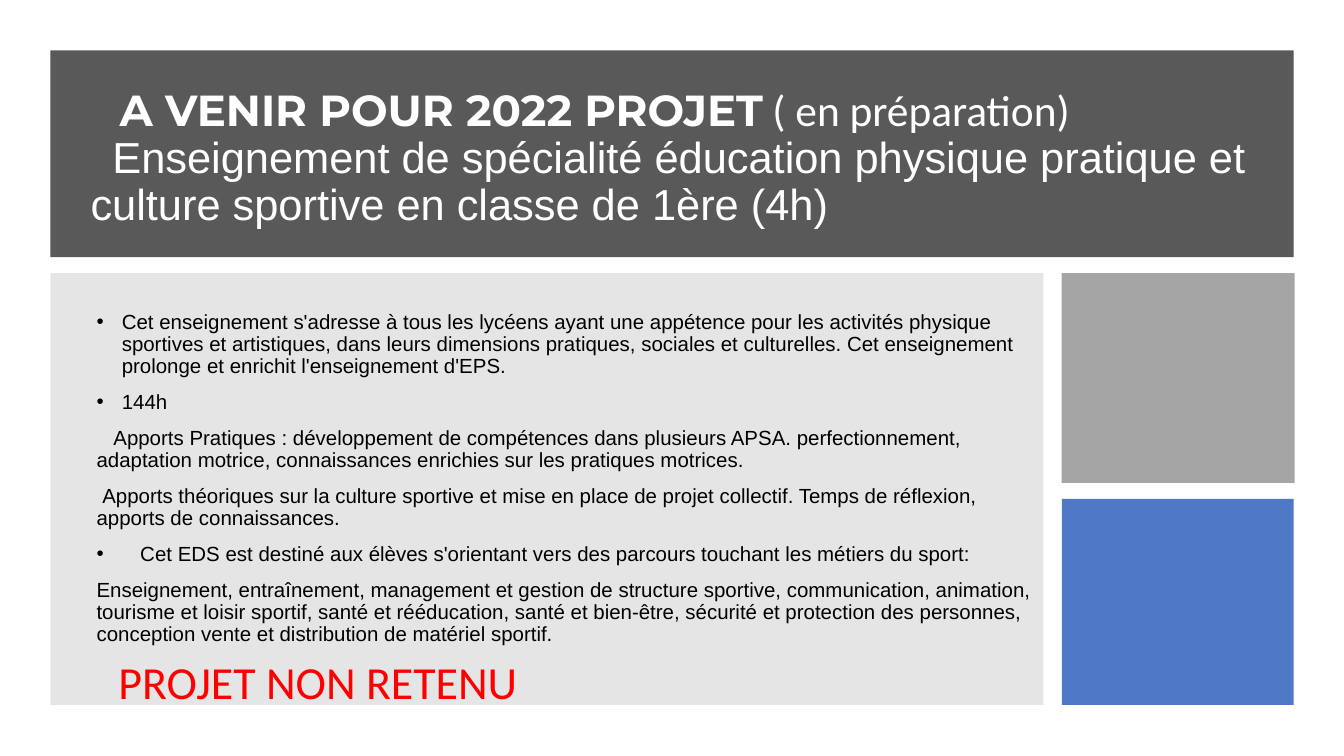
"""Build a slide announcing a sports teaching project."""
from dataclasses import dataclass
from typing import Any

import lxml.etree
import pptx
import pptx.dml.color
import pptx.enum.shapes
import pptx.enum.text
import pptx.oxml.ns
import pptx.util


@dataclass(frozen=True)
class Theme:
    banner: str = "595959"
    panel: str = "808080"
    grey: str = "A5A5A5"
    blue: str = "4472C4"
    light: str = "FFFFFF"
    dark: str = "000000"
    alert: str = "FF0000"
    title_size: float = 31
    body_size: float = 14.6
    alert_size: float = 32.8
    main_font: str = "Arial"
    soft_font: str = "Calibri"
    heavy_font: str = "Montserrat"


@dataclass(frozen=True)
class Area:
    column: float
    row: float
    columns: float
    rows: float


@dataclass(frozen=True)
class Panel:
    area: Area
    color: str
    opacity: int = 100


@dataclass(frozen=True)
class Span:
    text: str
    size: float
    color: str
    font: str
    bold: bool = False


@dataclass(frozen=True)
class Para:
    spans: list[Span]
    margin: float = 0
    indent: float = 0
    bullet: bool = False


THEME = Theme()
WIDTH = pptx.util.Inches(13.33)
HEIGHT = pptx.util.Inches(7.5)
COLUMN = WIDTH / 80
ROW = HEIGHT / 45

PANELS = [
    Panel(Area(3, 3, 74, 12.3), THEME.banner),
    Panel(Area(3, 16.26, 59.1, 25.7), THEME.panel, 20),
    Panel(Area(63.2, 16.26, 13.86, 12.48), THEME.grey),
    Panel(Area(63.2, 29.7, 13.8, 12.26), THEME.blue, 95),
]
TITLE_AREA = Area(4.8, 4.8, 70, 9.36)
BODY_AREA = Area(5.16, 18.24, 56.9, 24)


def title_span(text: str, font: str, bold: bool = False) -> Span:
    """Return a span in the title style."""
    return Span(text, THEME.title_size, THEME.light, font, bold)


def body_para(text: str, margin: float = 0, indent: float = 0, bullet: bool = False) -> Para:
    """Return a paragraph in the body style."""
    span = Span(text, THEME.body_size, THEME.dark, THEME.main_font)
    return Para([span], margin, indent, bullet)


TITLE = [
    Para([title_span("A VENIR POUR 2022 PROJET", THEME.heavy_font, True),
          title_span(" ( en préparation)", THEME.soft_font)], indent=1.74),
    Para([title_span("Enseignement de spécialité éducation physique pratique et culture "
                     "sportive en classe de 1ère (4h)", THEME.main_font)], indent=1.3),
]
BODY = [
    body_para("Cet enseignement s'adresse à tous les lycéens ayant une appétence pour les "
              "activités physique sportives et artistiques, dans leurs dimensions pratiques, "
              "sociales et culturelles. Cet enseignement prolonge et enrichit l'enseignement "
              "d'EPS.", 1.5, -1.5, True),
    body_para("144h", 1.5, -1.5, True),
    body_para("Apports Pratiques : développement de compétences dans plusieurs APSA. "
              "perfectionnement, adaptation motrice, connaissances enrichies sur les "
              "pratiques motrices.", indent=1),
    body_para("Apports théoriques sur la culture sportive et mise en place de projet "
              "collectif. Temps de réflexion, apports de connaissances.", indent=0.34),
    body_para("Cet EDS est destiné aux élèves s'orientant vers des parcours touchant les "
              "métiers du sport:", 2.6, -2.6, True),
    body_para("Enseignement, entraînement, management et gestion de structure sportive, "
              "communication, animation, tourisme et loisir sportif, santé et rééducation, "
              "santé et bien-être, sécurité et protection des personnes, conception vente et "
              "distribution de matériel sportif."),
    Para([Span("PROJET NON RETENU", THEME.alert_size, THEME.alert, THEME.soft_font)],
         indent=1.3),
]


def set_attributes(target: Any, values: dict[str, Any]) -> None:
    """Set every named value on the target."""
    for name, value in values.items():
        setattr(target, name, value)


def bounds(area: Area) -> tuple[int, int, int, int]:
    """Convert a grid area to slide lengths."""
    return (round(area.column * COLUMN), round(area.row * ROW),
            round(area.columns * COLUMN), round(area.rows * ROW))


def draw_panel(page: Any, panel: Panel) -> None:
    """Draw one flat rectangle."""
    box = page.shapes.add_shape(pptx.enum.shapes.MSO_SHAPE.RECTANGLE, *bounds(panel.area))
    box.shadow.inherit = False
    box.line.fill.background()
    box.fill.solid()
    box.fill.fore_color.rgb = pptx.dml.color.RGBColor.from_string(panel.color)
    if panel.opacity < 100:
        color = box.element.spPr.find(".//" + pptx.oxml.ns.qn("a:srgbClr"))
        alpha = lxml.etree.SubElement(color, pptx.oxml.ns.qn("a:alpha"))
        alpha.set("val", str(panel.opacity * 1000))


def draw_text(page: Any, area: Area, paras: list[Para], anchor: Any, gap: float) -> None:
    """Draw a text box with its paragraphs and spans."""
    frame = page.shapes.add_textbox(*bounds(area)).text_frame
    set_attributes(frame, {"word_wrap": True, "vertical_anchor": anchor})
    for index, para in enumerate(paras):
        paragraph = frame.add_paragraph() if index else frame.paragraphs[0]
        set_attributes(paragraph, {
            "line_spacing": 0.9,
            "space_before": pptx.util.Pt(gap if index else 0),
        })
        properties = paragraph._p.get_or_add_pPr()
        properties.set("marL", str(round(para.margin * COLUMN)))
        properties.set("indent", str(round(para.indent * COLUMN)))
        if para.bullet:
            font = lxml.etree.SubElement(properties, pptx.oxml.ns.qn("a:buFont"))
            font.set("typeface", THEME.main_font)
            mark = lxml.etree.SubElement(properties, pptx.oxml.ns.qn("a:buChar"))
            mark.set("char", "•")
        for span in para.spans:
            run = paragraph.add_run()
            run.text = span.text
            set_attributes(run.font, {
                "name": span.font, "size": pptx.util.Pt(span.size), "bold": span.bold,
            })
            run.font.color.rgb = pptx.dml.color.RGBColor.from_string(span.color)


def main() -> None:
    """Assemble and save the deck."""
    deck = pptx.Presentation()
    set_attributes(deck, {"slide_width": WIDTH, "slide_height": HEIGHT})
    page = deck.slides.add_slide(deck.slide_layouts[6])
    for panel in PANELS:
        draw_panel(page, panel)
    draw_text(page, TITLE_AREA, TITLE, pptx.enum.text.MSO_ANCHOR.MIDDLE, 0)
    draw_text(page, BODY_AREA, BODY, pptx.enum.text.MSO_ANCHOR.TOP, 10)
    deck.save("out.pptx")


if __name__ == "__main__":
    main()
